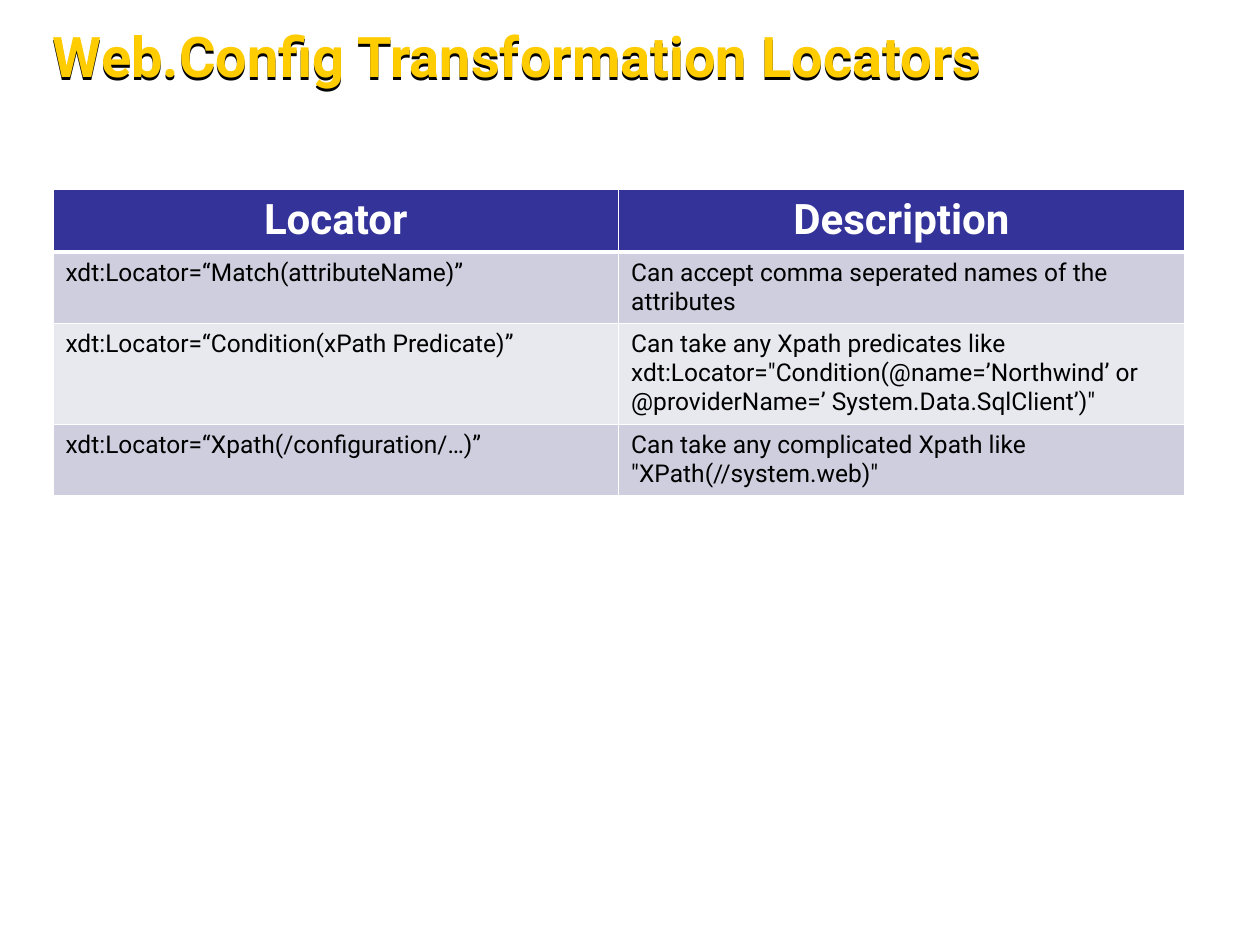
from lxml import etree
from pptx import Presentation
from pptx.dml.color import RGBColor
from pptx.enum.text import PP_ALIGN
from pptx.oxml.ns import qn
from pptx.util import Inches, Pt

LEFT = PP_ALIGN.LEFT
CENTER = PP_ALIGN.CENTER
COLORS = {
    "title": "FFCC00",
    "shadow": "000000",
    "header": "333399",
    "odd": "CECEDE",
    "even": "E8E8EF",
    "border": "FFFFFF",
    "header_text": "FFFFFF",
    "body_text": "000000",
}
FORMATS = {
    "title": {"size": Pt(32), "bold": True},
    "header_text": {"size": Pt(24), "bold": True},
    "body_text": {"size": Pt(14), "bold": False},
}
ROWS = [
    ("Locator", "Description"),
    ("xdt:Locator=“Match(attributeName)”",
     "Can accept comma seperated names of the attributes"),
    ("xdt:Locator=“Condition(xPath Predicate)”",
     "Can take any Xpath predicates like xdt:Locator=\"Condition(@name=’Northwind’ or "
     "@providerName=’ System.Data.SqlClient’)\""),
    ("xdt:Locator=“Xpath(/configuration/…)”",
     "Can take any complicated Xpath like \"XPath(//system.web)\""),
]
ROW_HEIGHTS = [0.48, 0.56, 0.79, 0.56]


class SlideBuilder:
    font_name = "Roboto"

    def __init__(self, slide):
        self.slide = slide

    def add_text(self, frame, text, style, alignment):
        paragraph = frame.paragraphs[0]
        paragraph.alignment = alignment
        run = paragraph.add_run()
        run.text = text
        for name, value in {"name": self.font_name, **FORMATS[style]}.items():
            setattr(run.font, name, value)
        run.font.color.rgb = RGBColor.from_string(COLORS[style])

    def add_color(self, parent, color):
        etree.SubElement(parent, qn("a:srgbClr"), val=COLORS[color])

    def add_title(self, text, left, top, width, height):
        shape = self.slide.shapes.add_textbox(
            Inches(left), Inches(top), Inches(width), Inches(height))
        frame = shape.text_frame
        frame.word_wrap = True
        for side in ("left", "top", "right", "bottom"):
            setattr(frame, f"margin_{side}", 0)
        self.add_text(frame, text, "title", LEFT)
        effects = etree.SubElement(shape.element.spPr, qn("a:effectLst"))
        shadow = etree.SubElement(effects, qn("a:outerShdw"),
                                  dist=str(Pt(1.5)), dir="5400000")
        self.add_color(shadow, "shadow")

    def add_borders(self, cell, widths):
        properties = cell._tc.get_or_add_tcPr()
        for side, width in widths.items():
            line = etree.SubElement(properties, qn(f"a:ln{side}"), w=str(Pt(width)))
            self.add_color(etree.SubElement(line, qn("a:solidFill")), "border")

    def add_table(self, rows, heights, left, top, width):
        table = self.slide.shapes.add_table(
            len(rows), len(rows[0]), Inches(left), Inches(top),
            Inches(width), Inches(sum(heights))).table
        for row, (texts, height) in enumerate(zip(rows, heights)):
            table.rows[row].height = Inches(height)
            is_header = row == 0
            fill = "header" if is_header else "odd" if row % 2 else "even"
            style = "header_text" if is_header else "body_text"
            widths = {"L": 1, "R": 1, "T": 3 if row == 1 else 1, "B": 3 if is_header else 1}
            for column, text in enumerate(texts):
                cell = table.cell(row, column)
                self.add_text(cell.text_frame, text, style, CENTER if is_header else LEFT)
                self.add_borders(cell, widths)
                cell.fill.solid()
                cell.fill.fore_color.rgb = RGBColor.from_string(COLORS[fill])


def main():
    presentation = Presentation()
    presentation.slide_width = Inches(10)
    presentation.slide_height = Inches(7.5)
    builder = SlideBuilder(presentation.slides.add_slide(presentation.slide_layouts[6]))
    builder.add_title("Web.Config Transformation Locators", 0.42, 0.17, 9.16, 0.54)
    builder.add_table(ROWS, ROW_HEIGHTS, 0.42, 1.5, 8.98)
    presentation.save("out.pptx")


if __name__ == "__main__":
    main()
